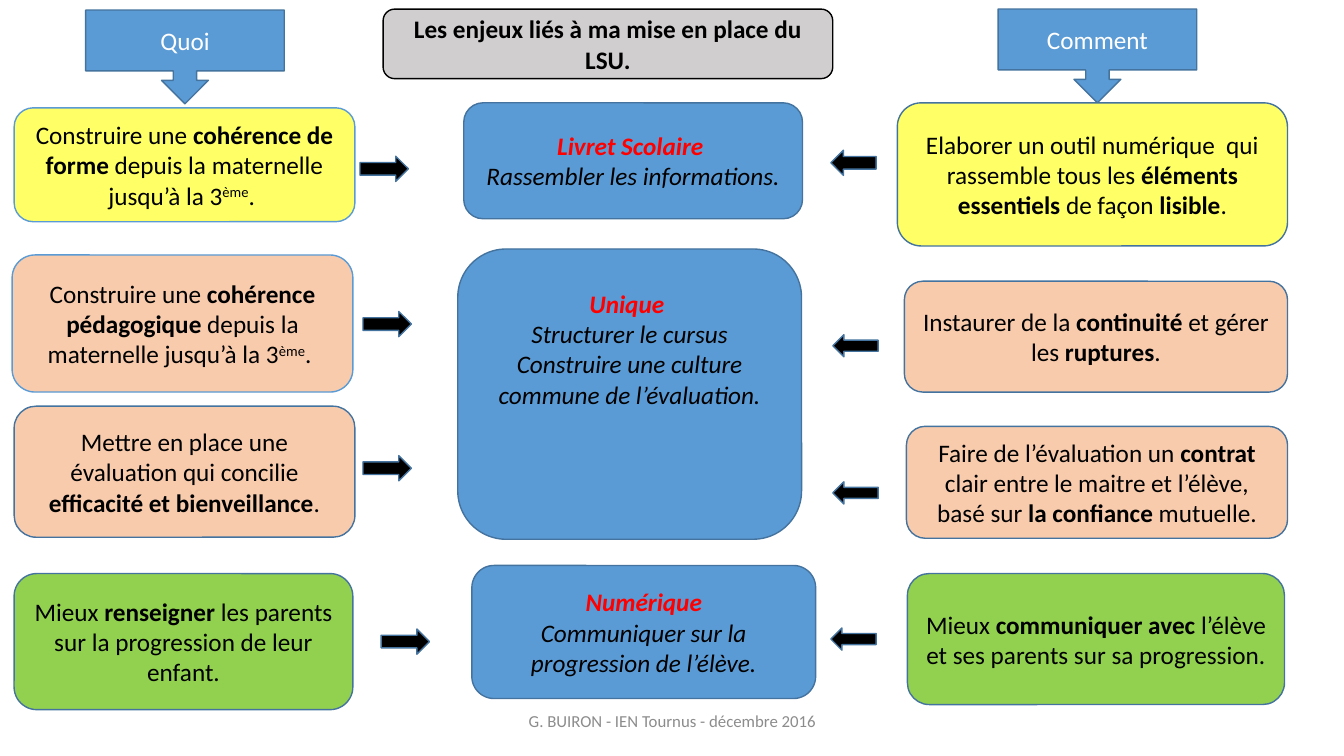
from pptx import Presentation, util as u
from pptx.dml.color import RGBColor
from pptx.enum import shapes, text

BLACK = RGBColor(0, 0, 0)
WHITE = RGBColor(255, 255, 255)
RED = RGBColor(255, 0, 0)
GREY = RGBColor(0xD0, 0xCE, 0xCE)
FOOTER = RGBColor(0x8C, 0x8C, 0x8C)
BLUE = RGBColor(0x5B, 0x9B, 0xD5)
EDGE = RGBColor(0x43, 0x73, 0x9E)
YELLOW = RGBColor(0xFF, 0xFF, 0x66)
PEACH = RGBColor(0xF8, 0xCB, 0xAD)
GREEN = RGBColor(0x92, 0xD0, 0x50)
KIND = shapes.MSO_SHAPE

prs = Presentation()
prs.slide_width, prs.slide_height = u.Inches(13.33), u.Inches(7.5)
s = prs.slides.add_slide(prs.slide_layouts[6])


def add_shape(kind, box, fill, line=EDGE):
    sp = s.shapes.add_shape(kind, *[u.Inches(v) for v in box])
    sp.shadow.inherit = False
    sp.fill.solid()
    sp.fill.fore_color.rgb = fill
    sp.line.color.rgb = line
    sp.line.width = u.Pt(1)
    return sp


def write(sp, lines, color=BLACK, size=18):
    """Fill a shape with centred lines; *...* is bold, ^...^ is superscript."""
    tf = sp.text_frame
    tf.word_wrap = True
    tf.vertical_anchor = text.MSO_ANCHOR.MIDDLE
    for i, line in enumerate(lines):
        p = tf.add_paragraph() if i else tf.paragraphs[0]
        p.alignment = text.PP_ALIGN.CENTER
        p.font.name, p.font.size = "Calibri", u.Pt(size)
        p.font.color.rgb = color
        for j, part in enumerate(line.split("*")):
            for k, piece in enumerate(part.split("^")):
                if piece:
                    r = p.add_run()
                    r.text = piece
                    if j % 2:
                        r.font.bold = True
                    if k % 2:
                        r.font._element.set("baseline", "30000")
    return tf


# Title and column headings
sp = add_shape(KIND.ROUNDED_RECTANGLE, (3.8, 0.09, 4.46, 0.69), GREY, BLACK)
write(sp, ["*Les enjeux liés à ma mise en place du LSU.*"])
for label, x, y in (("Quoi", 0.85, 0.1), ("Comment", 9.9, 0.09)):
    sp = add_shape(KIND.DOWN_ARROW_CALLOUT, (x, y, 1.97, 0.93), BLUE)
    write(sp, [label], WHITE)

# Side boxes: what on the left, how on the right
side_boxes = [
    ((0.14, 1.07, 3.38, 1.13), YELLOW, BLUE,
     "Construire une *cohérence de forme* depuis la maternelle jusqu’à la 3^ème^. "),
    ((0.12, 2.53, 3.38, 1.36), PEACH, BLUE,
     "Construire une *cohérence pédagogique* depuis la maternelle jusqu’à la 3^ème^. "),
    ((0.14, 4.03, 3.38, 1.3), PEACH, EDGE,
     "Mettre en place une évaluation qui concilie *efficacité et bienveillance*."),
    ((0.14, 5.69, 3.36, 1.35), GREEN, EDGE,
     "Mieux *renseigner* les parents sur la progression de leur enfant."),
    ((8.9, 1.02, 3.87, 1.42), YELLOW, EDGE,
     "Elaborer un outil numérique  qui rassemble tous les "
     "*éléments essentiels *de façon *lisible*."),
    ((8.97, 2.79, 3.8, 1.1), PEACH, EDGE,
     "Instaurer de la *continuité* et gérer les *ruptures*."),
    ((8.99, 4.23, 3.78, 1.11), PEACH, EDGE,
     "Faire de l’évaluation un *contrat *clair entre le maitre et l’élève, "
     "basé sur *la confiance* mutuelle."),
    ((9, 5.69, 3.74, 1.3), GREEN, EDGE,
     "Mieux *communiquer avec *l’élève et ses parents sur sa progression."),
]
for box, fill, line, words in side_boxes:
    write(add_shape(KIND.ROUNDED_RECTANGLE, box, fill, line), [words])

# Central boxes, with a red heading; the last value is the bottom margin
central_boxes = [
    ((4.6, 1.02, 3.36, 1.15), 0.05,
     ["*Livret Scolaire *", "Rassembler les informations."]),
    ((4.54, 2.47, 3.41, 2.88), 0.95,
     ["*Unique *", "Structurer le cursus",
      "Construire une culture commune de l’évaluation."]),
    ((4.68, 5.61, 3.41, 1.32), 0.05,
     ["*Numérique*", "Communiquer sur la progression de l’élève."]),
]
for box, bottom, lines in central_boxes:
    tf = write(add_shape(KIND.ROUNDED_RECTANGLE, box, BLUE), lines)
    tf.margin_bottom = u.Inches(bottom)
    for p in tf.paragraphs:
        p.font.italic = True
    tf.paragraphs[0].font.color.rgb = RED

# Arrows pointing to the centre
for x, y in ((3.57, 1.55), (3.6, 3.09), (3.6, 4.52), (3.78, 6.24)):
    add_shape(KIND.RIGHT_ARROW, (x, y, 0.48, 0.25), BLACK)
for x, y, h in ((8.24, 1.49, 0.25), (8.26, 3.32, 0.22),
                (8.26, 4.78, 0.22), (8.24, 6.23, 0.22)):
    add_shape(KIND.LEFT_ARROW, (x, y, 0.45, h), BLACK)

# Footer
sp = s.shapes.add_textbox(*[u.Inches(v) for v in (4.42, 6.95, 4.5, 0.4)])
write(sp, ["G. BUIRON - IEN Tournus - décembre 2016"], FOOTER, 12)

prs.save("out.pptx")
